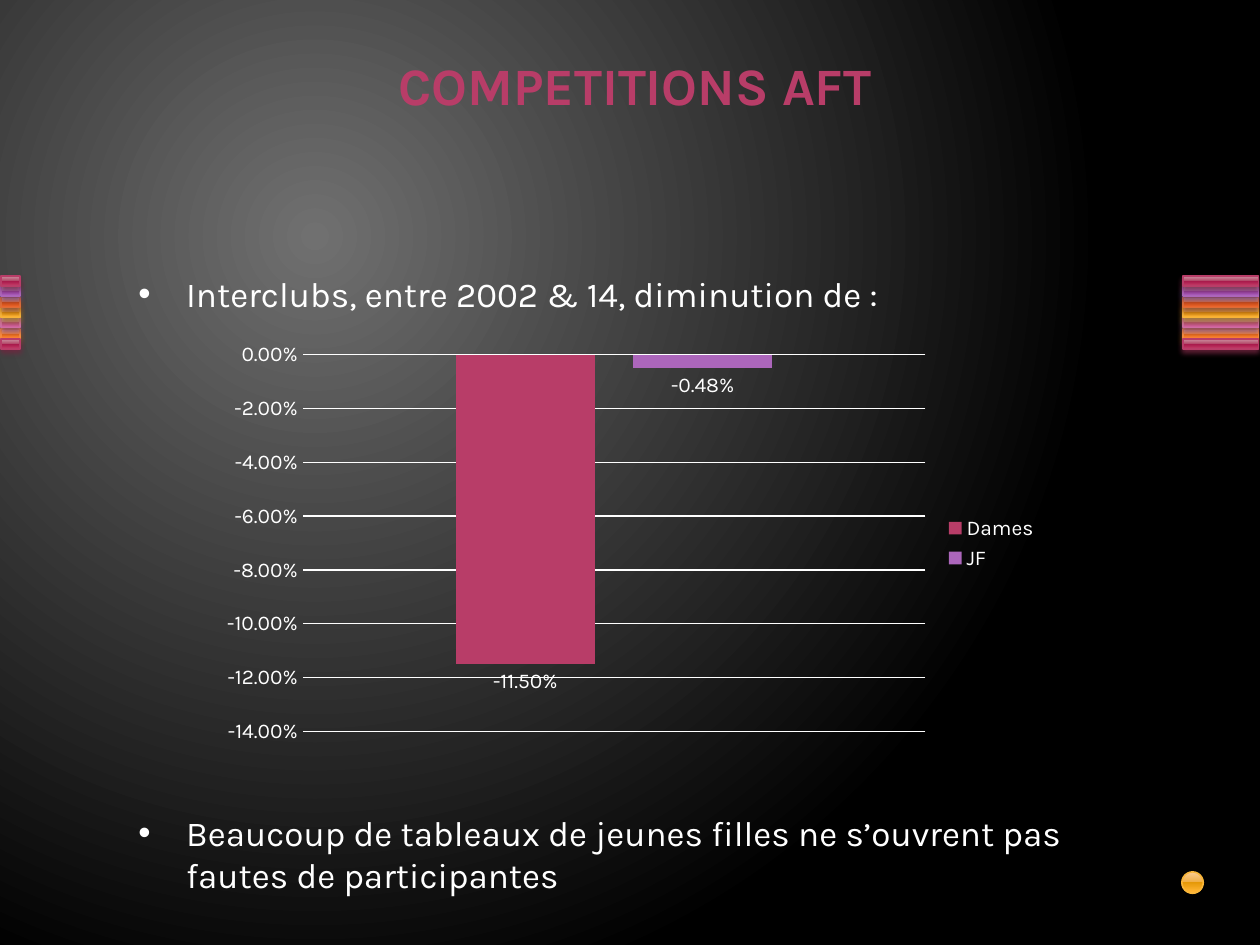
from lxml import etree
from pptx import Presentation
from pptx import util as u
from pptx.chart.data import CategoryChartData
from pptx.dml.color import RGBColor
from pptx.enum import chart as ch
from pptx.enum import shapes, text
from pptx.oxml.ns import qn

PX = 9144  # EMU per px, 100 px to the inch
FONT = "Karla"
COLOURS = {
    "white": "FFFFFF", "crimson": "B83D68", "purple": "AC66BB",
    "rust": "DE6C36", "amber": "F9B639", "pink": "CF6DA4", "orange": "FA8D3D",
}
SHADOWS = {
    "crimson": "722640", "purple": "6A3F73", "rust": "894321",
    "amber": "9A7023", "pink": "804365", "orange": "9A5726",
}
GLOSS_STOPS = (0, 49, 49, 92, 100)
GLOSS = {
    "crimson": ("CE94A2", "B34869", "A61749", "C13764", "CA5D7C"),
    "purple": ("C6A2D0", "A666B4", "8F3EA1", "AD5DBF", "BA76CA"),
    "rust": ("E7A493", "D66B42", "CC4809", "E9642C", "F07B55"),
    "amber": ("FBCC93", "EFAE43", "E59807", "FFB432", "FFBE5F"),
    "pink": ("DDA4C1", "C66B9D", "B34181", "D361A0", "DC79AE"),
    "orange": ("FBB494", "F08745", "E5670B", "FF8736", "FF9961"),
}
# Stripe rows from top to bottom
STRIPES = ("crimson", "purple", "rust", "amber", "pink", "orange", "crimson")


def rgb(name):
    return RGBColor.from_string(COLOURS[name])


def px(*lengths):
    return [u.Emu(length * PX) for length in lengths]


def add_xml(parent, tag, **attributes):
    return etree.SubElement(parent, qn(tag), {k: str(v) for k, v in attributes.items()})


def style_font(font, size, colour="white", bold=False):
    font.name, font.size, font.bold = FONT, u.Pt(size), bold
    font.color.rgb = rgb(colour)


def set_gradient(properties, stops):
    """Put a gradient in place of the solid fill and return it."""
    gradient = etree.Element(qn("a:gradFill"), rotWithShape="1")
    stop_list = add_xml(gradient, "a:gsLst")
    for position, colour in stops:
        stop = add_xml(stop_list, "a:gs", pos=position * 1000)
        add_xml(stop, "a:srgbClr", val=colour)
    properties.replace(properties.find(qn("a:solidFill")), gradient)
    return gradient


def add_background(page):
    page.background.fill.solid()
    properties = page.element.find(".//" + qn("p:bgPr"))
    gradient = set_gradient(properties, [(0, "707070"), (100, "000000")])
    circle = add_xml(gradient, "a:path", path="circle")
    add_xml(circle, "a:fillToRect", l=50000, t=50000, r=100000, b=100000)


def add_glossy(parent, kind, name, *place):
    shape = parent.add_shape(kind, *px(*place))
    shape.shadow.inherit = False
    shape.fill.solid()
    gradient = set_gradient(shape.element.spPr, zip(GLOSS_STOPS, GLOSS[name]))
    add_xml(gradient, "a:lin", ang=5400000, scaled=0)
    shape.line.color.rgb = rgb(name)
    shape.line.width = u.Pt(0.9)
    return shape


def add_shadow(shape, colour):
    effects = shape.element.spPr.find(qn("a:effectLst"))
    shadow = add_xml(effects, "a:outerShdw", blurRad=u.Pt(3.1), dist=u.Pt(2),
                     dir=5400000, rotWithShape=0)
    add_xml(add_xml(shadow, "a:srgbClr", val=colour), "a:alpha", val=83000)


def add_stripes(page, left, width):
    group = page.shapes.add_group_shape()
    last = len(STRIPES) - 1
    # The rows overlap upwards; the bottom one lies on top
    for row in [*reversed(range(last)), last]:
        name = STRIPES[row]
        top = 219 + round(row * 25 / 3)
        stripe = add_glossy(group.shapes, shapes.MSO_SHAPE.RECTANGLE, name,
                            left, top, width, 8)
        add_shadow(stripe, SHADOWS[name])


def add_title(page, words):
    title = page.shapes.title
    title.left, title.top, title.width, title.height = px(83, 29, 842, 68)
    frame = title.text_frame
    frame.text = words
    frame.vertical_anchor = text.MSO_ANCHOR.BOTTOM
    para = frame.paragraphs[0]
    para.alignment = text.PP_ALIGN.CENTER
    style_font(para.runs[0].font, 30, "crimson", bold=True)


def add_bullets(page, lines, gap):
    box = page.shapes.add_textbox(*px(100, 208, 817, 505))
    frame = box.text_frame
    frame.word_wrap = True
    frame.margin_top = u.Emu(8 * PX)
    frame.text = "\n".join(lines)
    for index, para in enumerate(frame.paragraphs):
        properties = para._p.get_or_add_pPr()
        properties.set("marL", str(38 * PX))
        properties.set("indent", str(-38 * PX))
        add_xml(properties, "a:buFont", typeface="Arial")
        add_xml(properties, "a:buChar", char="•")
        para.space_before = u.Pt(gap if index else 0)
        style_font(para.runs[0].font, 20)


def add_column_chart(page):
    data = CategoryChartData(number_format="0.00%")
    data.categories = ["1"]
    data.add_series("Dames", [-0.115])
    data.add_series("JF", [-0.0048])
    chart = page.shapes.add_chart(ch.XL_CHART_TYPE.COLUMN_CLUSTERED,
                                  *px(167, 265, 667, 332), data).chart
    style_font(chart.font, 10)
    chart.has_title = False
    chart.has_legend = True
    chart.legend.position = ch.XL_LEGEND_POSITION.RIGHT
    chart.legend.include_in_layout = False
    style_font(chart.legend.font, 12)

    # Axes
    chart.category_axis.visible = False
    axis = chart.value_axis
    axis.minimum_scale, axis.maximum_scale, axis.major_unit = -0.14, 0, 0.02
    axis.major_tick_mark = axis.minor_tick_mark = ch.XL_TICK_MARK.NONE
    axis.format.line.fill.background()
    axis.major_gridlines.format.line.color.rgb = rgb("white")
    axis.major_gridlines.format.line.width = u.Pt(0.75)
    axis.tick_labels.number_format = "0.00%"
    axis.tick_labels.number_format_is_linked = False
    style_font(axis.tick_labels.font, 12)

    # Columns and their values
    plot = chart.plots[0]
    plot.gap_width, plot.overlap, plot.vary_by_categories = 219, -27, False
    for series, name in zip(plot.series, ("crimson", "purple")):
        series.invert_if_negative = False
        series.format.fill.solid()
        series.format.fill.fore_color.rgb = rgb(name)
        labels = series.data_labels
        labels.show_value = True
        labels.position = ch.XL_LABEL_POSITION.OUTSIDE_END
        labels.number_format = "0.00%"
        labels.number_format_is_linked = False
        style_font(labels.font, 12)


def main():
    deck = Presentation()
    deck.slide_width, deck.slide_height = px(1000, 750)
    page = deck.slides.add_slide(deck.slide_layouts[5])
    add_background(page)
    # Edge decoration
    add_stripes(page, 1, 15)
    add_stripes(page, 939, 60)
    add_glossy(page.shapes, shapes.MSO_SHAPE.OVAL, "amber", 938, 692, 17, 17)
    # Content
    add_title(page, "COMPETITIONS AFT")
    add_bullets(page, ["Interclubs, entre 2002 & 14, diminution de :",
                       "Beaucoup de tableaux de jeunes filles ne s’ouvrent pas "
                       "fautes de participantes"], gap=284)
    add_column_chart(page)
    deck.save("out.pptx")


if __name__ == "__main__":
    main()
